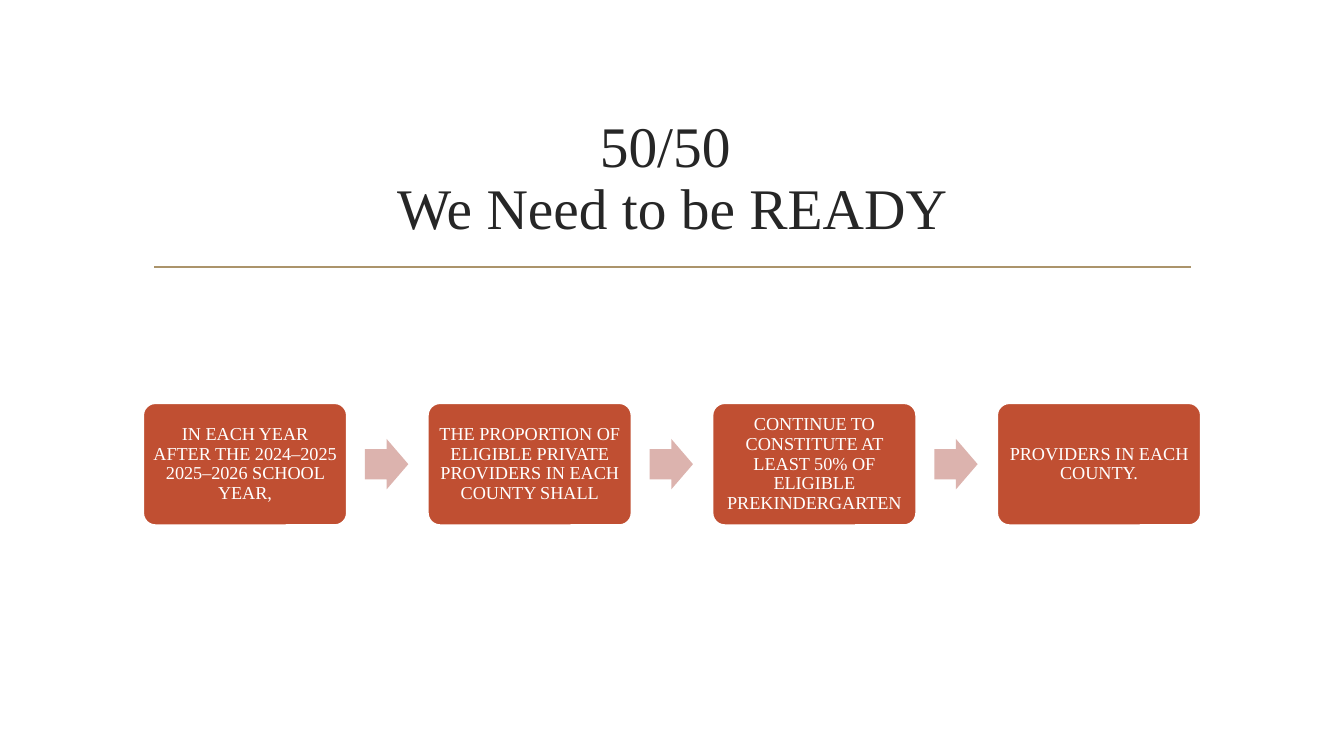
from lxml.etree import SubElement
from pptx import Presentation
from pptx.dml.color import RGBColor
from pptx.enum.shapes import MSO_CONNECTOR as Connector, MSO_SHAPE as Shape
from pptx.enum.text import MSO_ANCHOR as Anchor, PP_ALIGN as Align
from pptx.oxml.ns import qn
from pptx.util import Inches, Pt

COLORS = {
    "title": "262626",
    "rule": "AB946B",
    "step": "C04F32",
    "arrow": "DCB3AE",
    "white": "FFFFFF",
}
FONT = "Times New Roman"
STEPS = [
    "IN EACH YEAR AFTER THE 2024–2025 2025–2026 SCHOOL YEAR,",
    "THE PROPORTION OF ELIGIBLE PRIVATE PROVIDERS IN EACH COUNTY SHALL",
    "CONTINUE TO CONSTITUTE AT LEAST 50% OF ELIGIBLE PREKINDERGARTEN",
    "PROVIDERS IN EACH COUNTY.",
]
FIRST_LEFT, LAST_LEFT = 1.42, 9.89
STEP_TOP, STEP_WIDTH, STEP_HEIGHT = 4, 2.02, 1.21
ARROW_OFFSET, ARROW_WIDTH, ARROW_HEIGHT = 2.2, 0.43, 0.5


def rgb(name):
    return RGBColor.from_string(COLORS[name])


def write_text(frame, text, size, color, inset):
    frame.word_wrap = True
    frame.vertical_anchor = Anchor.MIDDLE
    frame.margin_left = frame.margin_right = Inches(inset)
    frame.margin_top = frame.margin_bottom = Inches(0.05)
    paragraph = frame.paragraphs[0]
    paragraph.text = text
    paragraph.alignment = Align.CENTER
    paragraph.line_spacing = 0.9
    for run in paragraph.runs:
        run.font.name = FONT
        run.font.size = Pt(size)
        run.font.color.rgb = rgb(color)


def add_title(slide, text):
    title = slide.shapes.add_textbox(Inches(1.42), Inches(1.07), Inches(10.5), Inches(1.43))
    write_text(title.text_frame, text, size=41, color="title", inset=0.1)


def add_rule(slide, left, right, y):
    rule = slide.shapes.add_connector(
        Connector.STRAIGHT, Inches(left), Inches(y), Inches(right), Inches(y)
    )
    rule.line.color.rgb = rgb("rule")
    rule.line.width = Pt(1.25)
    SubElement(rule._element.spPr, qn("a:effectLst"))


def add_filled(slide, kind, left, top, width, height, fill, adjustments):
    filled = slide.shapes.add_shape(
        kind, Inches(left), Inches(top), Inches(width), Inches(height)
    )
    filled.shadow.inherit = False
    filled.fill.solid()
    filled.fill.fore_color.rgb = rgb(fill)
    filled.line.fill.background()
    for index, value in enumerate(adjustments):
        filled.adjustments[index] = value
    return filled


def add_step(slide, left, text):
    step = add_filled(slide, Shape.ROUNDED_RECTANGLE, left, STEP_TOP,
                      STEP_WIDTH, STEP_HEIGHT, "step", [0.1])
    step.line.color.rgb = rgb("white")
    step.line.width = Pt(1.25)
    write_text(step.text_frame, text, size=13, color="white", inset=0.05)


def add_arrow(slide, left):
    top = STEP_TOP + (STEP_HEIGHT - ARROW_HEIGHT) / 2
    add_filled(slide, Shape.RIGHT_ARROW, left, top,
               ARROW_WIDTH, ARROW_HEIGHT, "arrow", [0.6, 0.5])


def main():
    deck = Presentation()
    deck.slide_width, deck.slide_height = Inches(13.33), Inches(7.5)
    slide = deck.slides.add_slide(deck.slide_layouts[6])
    add_rule(slide, 1.53, 11.81, 2.65)
    add_title(slide, "50/50 \vWe Need to be READY")
    pitch = (LAST_LEFT - FIRST_LEFT) / (len(STEPS) - 1)
    for index, text in enumerate(STEPS):
        left = FIRST_LEFT + index * pitch
        add_step(slide, left, text)
        if index < len(STEPS) - 1:
            add_arrow(slide, left + ARROW_OFFSET)
    deck.save("out.pptx")


if __name__ == "__main__":
    main()
